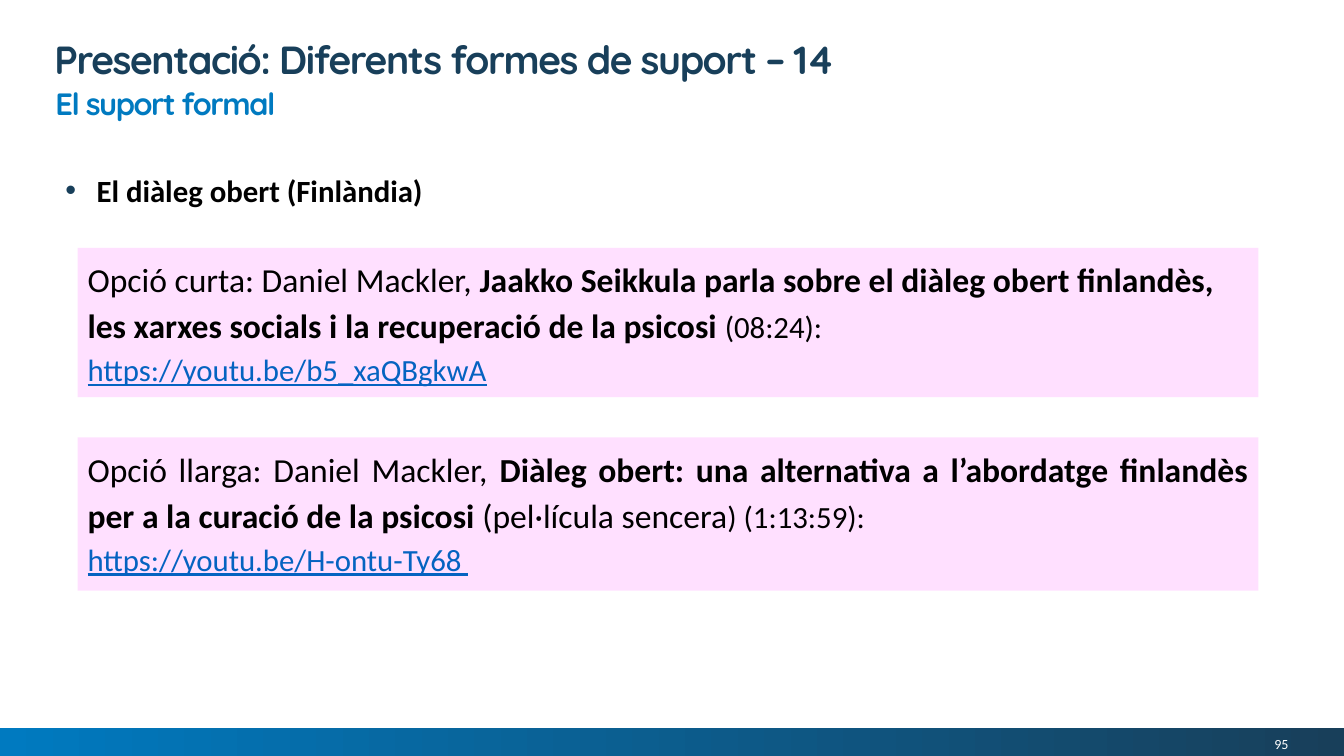
from dataclasses import dataclass

from lxml import etree
from pptx import Presentation
from pptx.dml.color import RGBColor
from pptx.enum.shapes import MSO_SHAPE as SHAPE
from pptx.enum.text import MSO_ANCHOR as ANCHOR, PP_ALIGN as ALIGN
from pptx.oxml.ns import qn
from pptx.util import Inches, Pt


@dataclass(frozen=True)
class Theme:
    head_font: str = "Quicksand"
    body_font: str = "Calibri"
    navy: str = "183F5A"
    blue: str = "007AC0"
    pink: str = "FF99FF"
    pink_opacity: int = 30
    link: str = "0563C1"
    black: str = "000000"
    white: str = "FFFFFF"
    title: int = 28
    large: int = 24
    normal: int = 22
    number: int = 10
    head_leading: int = 33
    card_leading: float = 1.15


T = Theme()
WIDTH, HEIGHT = 13.33, 7.5
MARGIN = 0.55
INNER = WIDTH - 2 * MARGIN
INDENT = 0.31
CARD_LEFT, CARD_WIDTH = 0.77, 11.71


def add_run(p, text, size, color=T.black, font=T.body_font, bold=False, underline=None):
    r = p.add_run()
    r.text = text
    f = r.font
    f.name, f.size, f.bold, f.underline = font, Pt(size), bold, underline
    f.color.rgb = RGBColor.from_string(color)
    return r


def add_box(s, box, inset=True, anchor=ANCHOR.TOP):
    """Add a wrapping text box and return its text frame."""
    tf = s.shapes.add_textbox(*map(Inches, box)).text_frame
    tf.word_wrap = True
    tf.vertical_anchor = anchor
    if not inset:
        tf.margin_left = tf.margin_top = tf.margin_right = tf.margin_bottom = 0
    return tf


def add_bar(s, box):
    sp = s.shapes.add_shape(SHAPE.RECTANGLE, *map(Inches, box))
    sp.shadow.inherit = False
    sp.line.fill.background()
    sp.fill.gradient()
    sp.fill.gradient_angle = 0
    for stop, color, place in zip(sp.fill.gradient_stops, (T.blue, T.navy), (0, 1)):
        stop.color.rgb = RGBColor.from_string(color)
        stop.position = place


def add_footer(s, box, number):
    left, top, width, height = box
    add_bar(s, box)
    number_width = 1.8
    number_box = (left + width - MARGIN - number_width, top + 0.04, number_width, height - 0.04)
    p = add_box(s, number_box, inset=False, anchor=ANCHOR.MIDDLE).paragraphs[0]
    p.alignment = ALIGN.RIGHT
    add_run(p, number, T.number, T.white)


def add_heading(s, box, text, size, color, **frame):
    p = add_box(s, box, **frame).paragraphs[0]
    p.line_spacing = Pt(T.head_leading)
    r = add_run(p, text, size, color, T.head_font, bold=True)
    r.font._element.set("spc", "-100")


def add_bullet(s, box, text):
    p = add_box(s, box).paragraphs[0]
    pPr = p._p.get_or_add_pPr()
    pPr.set("marL", str(Inches(INDENT)))
    pPr.set("indent", str(-Inches(INDENT)))
    color = etree.SubElement(pPr, qn("a:buClr"))
    etree.SubElement(color, qn("a:srgbClr")).set("val", T.navy)
    etree.SubElement(pPr, qn("a:buFont")).set("typeface", "Arial")
    etree.SubElement(pPr, qn("a:buChar")).set("char", "•")
    p.space_after = Pt(12)
    add_run(p, text, T.normal, bold=True)


def add_video_card(s, box, runs, link, align):
    """Add a tinted card with a description and the video address below it."""
    sp = s.shapes.add_shape(SHAPE.RECTANGLE, *map(Inches, box))
    sp.shadow.inherit = False
    sp.line.fill.background()
    sp.fill.solid()
    sp.fill.fore_color.rgb = RGBColor.from_string(T.pink)
    tint = sp._element.spPr.find(f"{qn('a:solidFill')}/{qn('a:srgbClr')}")
    etree.SubElement(tint, qn("a:alpha")).set("val", str(T.pink_opacity * 1000))
    tf = sp.text_frame
    tf.word_wrap = True
    tf.vertical_anchor = ANCHOR.TOP
    description, address = tf.paragraphs[0], tf.add_paragraph()
    for p in (description, address):
        p.alignment = align
        p.line_spacing = T.card_leading
    for text, size, bold in runs:
        add_run(description, text, size, bold=bold)
    add_run(address, link, T.normal, T.link, underline=True)


def main():
    prs = Presentation()
    prs.slide_width, prs.slide_height = Inches(WIDTH), Inches(HEIGHT)
    s = prs.slides.add_slide(prs.slide_layouts[6])

    add_footer(s, (0, 7.22, WIDTH, HEIGHT - 7.22), "95")
    add_heading(s, (0.44, 0.31, 10.71, 0.47),
                "Presentació: Diferents formes de suport – 14", T.title, T.navy)
    add_heading(s, (MARGIN, 0.82, INNER, 0.39), "El suport formal", T.normal, T.blue,
                inset=False, anchor=ANCHOR.BOTTOM)
    add_bullet(s, (MARGIN, 1.65, INNER, 0.6), "El diàleg obert (Finlàndia)")

    add_video_card(s, (CARD_LEFT, 2.46, CARD_WIDTH, 1.48), [
        ("Opció curta: Daniel Mackler, ", T.large, False),
        ("Jaakko Seikkula parla sobre el diàleg obert finlandès, "
         "les xarxes socials i la recuperació de la psicosi ", T.large, True),
        ("(08:24):", T.normal, False),
    ], "https://youtu.be/b5_xaQBgkwA", ALIGN.LEFT)
    add_video_card(s, (CARD_LEFT, 4.34, CARD_WIDTH, 1.52), [
        ("Opció llarga: Daniel Mackler, ", T.large, False),
        ("Diàleg obert: una alternativa a l’abordatge finlandès "
         "per a la curació de la psicosi", T.large, True),
        (" (pel·lícula sencera", T.large, False),
        (") (1:13:59):", T.normal, False),
    ], "https://youtu.be/H-ontu-Ty68 ", ALIGN.JUSTIFY)

    prs.save("out.pptx")


if __name__ == "__main__":
    main()
